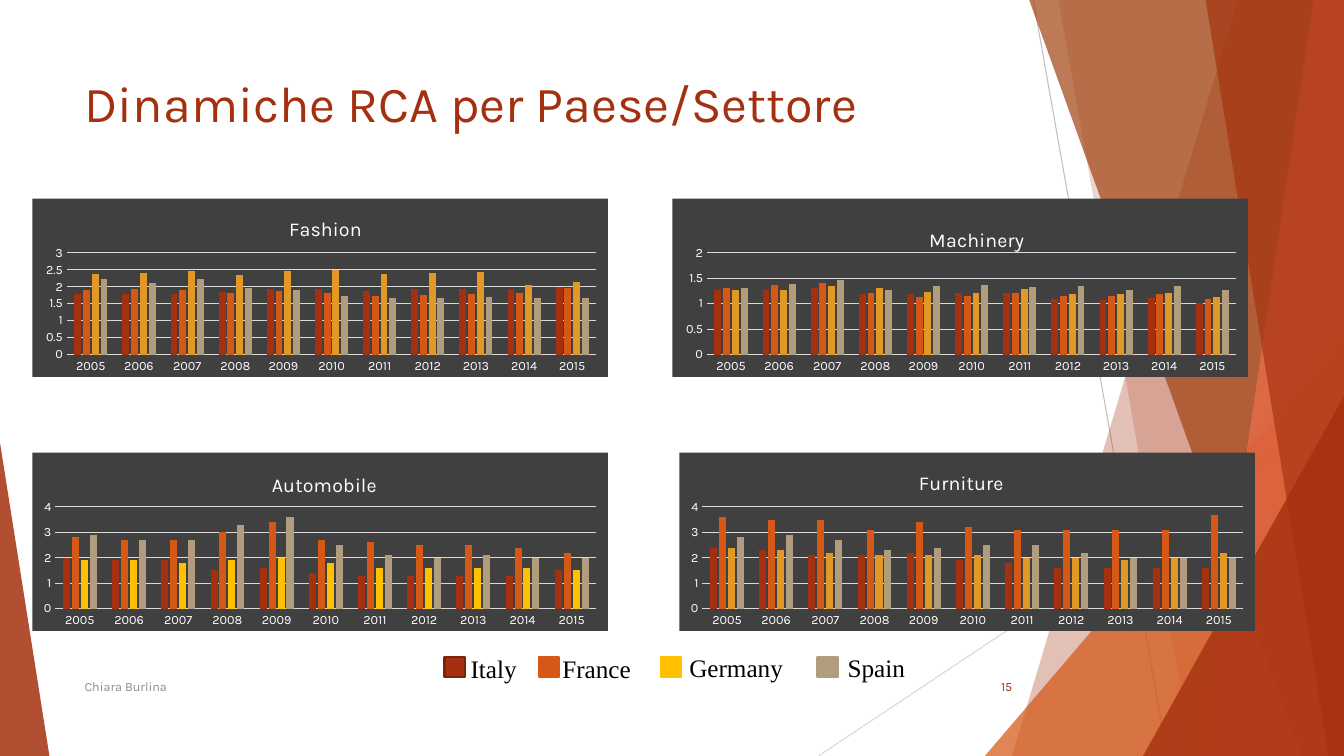
from lxml.etree import SubElement
from pptx import Presentation
from pptx.chart.data import CategoryChartData
from pptx.dml.color import RGBColor
from pptx.enum.chart import XL_CHART_TYPE, XL_TICK_MARK
from pptx.enum.shapes import MSO_CONNECTOR, MSO_SHAPE
from pptx.enum.text import MSO_ANCHOR, PP_ALIGN
from pptx.oxml import parse_xml
from pptx.oxml.ns import nsdecls, qn
from pptx.util import Inches, Pt

COLORS = {
    "rust": "A5300F", "dark_rust": "7A240B", "orange": "D55816", "amber": "E19825",
    "yellow": "FFC000", "sand": "B19C7D", "brown": "A04210", "coral": "EE6E4A",
    "panel": "404040", "grid": "D9D9D9", "rule": "BFBFBF", "muted": "8C8C8C",
    "white": "FFFFFF", "black": "000000",
}
COUNTRIES = ["Italy", "France", "Germany", "Spain"]
YEARS = [str(year) for year in range(2005, 2016)]


def rgb(name):
    return RGBColor.from_string(COLORS[name])


def write(frame, text, size=9, font="Karla", color="black",
          align=PP_ALIGN.LEFT, anchor=MSO_ANCHOR.TOP):
    frame.word_wrap = True
    frame.vertical_anchor = anchor
    paragraph = frame.paragraphs[0]
    paragraph.alignment = align
    run = paragraph.add_run()
    run.text = text
    style(run.font, size, color, font)


def style(font, size, color, name="Karla"):
    font.size, font.name, font.bold = Pt(size), name, False
    font.color.rgb = rgb(color)


def set_layout(parent, index, **shares):
    """Place a chart part by shares of the chart's size."""
    for old in parent.findall(qn("c:layout")):
        parent.remove(old)
    layout = parse_xml(f"<c:layout {nsdecls('c')}><c:manualLayout/></c:layout>")
    for tag, value in shares.items():
        SubElement(layout[0], qn(f"c:{tag}")).set("val", str(value))
    parent.insert(index, layout)


class SlideBuilder:
    """Positions are percentages of the slide's width and height."""

    def __init__(self, deck):
        self.deck = deck
        self.slide = deck.slides.add_slide(deck.slide_layouts[5])
        self.shapes = self.slide.shapes

    def x(self, share):
        return round(self.deck.slide_width * share / 100)

    def y(self, share):
        return round(self.deck.slide_height * share / 100)

    def box(self, left, top, width, height):
        return self.x(left), self.y(top), self.x(width), self.y(height)

    def paint(self, shape, color, opacity=100, line=None):
        shape.shadow.inherit = False
        shape.fill.solid()
        shape.fill.fore_color.rgb = rgb(color)
        if opacity < 100:
            tint = shape.element.spPr.find(qn("a:solidFill"))[0]
            SubElement(tint, qn("a:alpha")).set("val", str(opacity * 1000))
        if line:
            shape.line.color.rgb = rgb(line)
            shape.line.width = Pt(1.5)
        else:
            shape.line.fill.background()

    def title(self, text, *place):
        title = self.shapes.title
        title.left, title.top, title.width, title.height = self.box(*place)
        write(title.text_frame, text, size=36, color="rust")

    def text(self, text, *place, **form):
        write(self.shapes.add_textbox(*self.box(*place)).text_frame, text, **form)

    def line(self, x1, y1, x2, y2, color):
        line = self.shapes.add_connector(
            MSO_CONNECTOR.STRAIGHT, self.x(x1), self.y(y1), self.x(x2), self.y(y2))
        line.line.color.rgb = rgb(color)
        line.line.width = Pt(0.75)
        SubElement(line.element.spPr, qn("a:effectLst"))

    def band(self, top_left, bottom_left, color, opacity):
        """Fill from a slanted left edge to the right side of the slide."""
        outline = self.shapes.build_freeform(self.x(top_left), 0)
        outline.add_line_segments([(self.x(100), 0), (self.x(100), self.y(100)),
                                   (self.x(bottom_left), self.y(100))])
        self.paint(outline.convert_to_shape(), color, opacity)

    def triangle(self, left, top, width, apex, color, opacity):
        triangle = self.shapes.add_shape(
            MSO_SHAPE.ISOSCELES_TRIANGLE, *self.box(left, top, width, 100 - top))
        triangle.adjustments[0] = apex
        self.paint(triangle, color, opacity)

    def swatch(self, left, top, color, line):
        swatch = self.shapes.add_shape(MSO_SHAPE.RECTANGLE, *self.box(left, top, 1.5, 2.67))
        self.paint(swatch, color, line=line)

    def chart(self, sector, left, top, title_at, plot_x, top_value, step, germany, values):
        data = CategoryChartData()
        data.categories = YEARS
        for country, shares in zip(COUNTRIES, values):
            data.add_series(country, shares)
        chart = self.shapes.add_chart(XL_CHART_TYPE.COLUMN_CLUSTERED,
                                      *self.box(left, top, 42.83, 23.6), data).chart
        style(chart.font, 10, "white")
        chart.has_legend = False
        write_title = chart.chart_title.text_frame.paragraphs[0].add_run()
        write_title.text = sector
        style(write_title.font, 14, "white")
        set_layout(chart.chart_title.element, 1, xMode="edge", yMode="edge",
                   x=title_at[0], y=title_at[1])
        plot_area = chart.element.find(qn("c:chart")).find(qn("c:plotArea"))
        set_layout(plot_area, 0, layoutTarget="inner", xMode="edge", yMode="edge",
                   x=plot_x, y=0.305, w=round(0.98 - plot_x, 2), h=0.57)

        # Dark panel
        chart.element.find(qn("c:chart")).addnext(parse_xml(
            f"<c:spPr {nsdecls('c', 'a')}><a:solidFill><a:srgbClr val='{COLORS['panel']}'/>"
            "</a:solidFill><a:ln><a:noFill/></a:ln></c:spPr>"))

        # Axes
        years, index = chart.category_axis, chart.value_axis
        for axis in (years, index):
            axis.major_tick_mark = axis.minor_tick_mark = XL_TICK_MARK.NONE
            style(axis.tick_labels.font, 9, "white")
        index.minimum_scale, index.maximum_scale, index.major_unit = 0, top_value, step
        index.tick_labels.number_format = "General"
        index.tick_labels.number_format_is_linked = False
        index.format.line.fill.background()
        for rule in (years.format.line, index.major_gridlines.format.line):
            rule.color.rgb = rgb("grid")
            rule.width = Pt(0.75)

        # Columns
        columns = chart.plots[0]
        columns.gap_width, columns.overlap, columns.vary_by_categories = 219, -27, False
        for series, color in zip(columns.series, ["rust", "orange", germany, "sand"]):
            series.format.fill.solid()
            series.format.fill.fore_color.rgb = rgb(color)


FASHION = [
    [1.8, 1.8, 1.8, 1.86, 1.93, 1.93, 1.87, 1.93, 1.94, 1.93, 2],
    [1.91, 1.93, 1.92, 1.82, 1.87, 1.82, 1.73, 1.77, 1.79, 1.83, 1.98],
    [2.37, 2.41, 2.48, 2.34, 2.48, 2.5, 2.37, 2.42, 2.44, 2.04, 2.14],
    [2.22, 2.12, 2.24, 1.96, 1.92, 1.74, 1.68, 1.68, 1.7, 1.68, 1.67]]
MACHINERY = [
    [1.27, 1.27, 1.32, 1.19, 1.19, 1.21, 1.21, 1.1, 1.08, 1.12, 1.02],
    [1.32, 1.36, 1.41, 1.22, 1.14, 1.15, 1.21, 1.16, 1.16, 1.19, 1.1],
    [1.27, 1.28, 1.34, 1.3, 1.23, 1.21, 1.29, 1.19, 1.2, 1.21, 1.14],
    [1.31, 1.39, 1.47, 1.27, 1.34, 1.37, 1.33, 1.34, 1.28, 1.34, 1.26]]
AUTOMOBILE = [
    [2, 1.9, 1.9, 1.5, 1.6, 1.4, 1.3, 1.3, 1.3, 1.3, 1.5],
    [2.8, 2.7, 2.7, 3, 3.4, 2.7, 2.6, 2.5, 2.5, 2.4, 2.2],
    [1.9, 1.9, 1.8, 1.9, 2, 1.8, 1.6, 1.6, 1.6, 1.6, 1.5],
    [2.9, 2.7, 2.7, 3.3, 3.6, 2.5, 2.1, 2, 2.1, 2, 2]]
FURNITURE = [
    [2.4, 2.3, 2.1, 2.1, 2.2, 1.9, 1.8, 1.6, 1.6, 1.6, 1.6],
    [3.6, 3.5, 3.5, 3.1, 3.4, 3.2, 3.1, 3.1, 3.1, 3.1, 3.7],
    [2.4, 2.3, 2.2, 2.1, 2.1, 2.1, 2, 2, 1.9, 2, 2.2],
    [2.8, 2.9, 2.7, 2.3, 2.4, 2.5, 2.5, 2.2, 2, 2, 2]]


def main():
    deck = Presentation()
    deck.slide_width, deck.slide_height = Inches(13.33), Inches(7.5)
    page = SlideBuilder(deck)

    # Faceted backdrop
    page.line(76.88, 0, 86.86, 100, "rule")
    page.line(100, 53.73, 60.9, 100, "grid")
    page.band(92.1, 75.3, "rust", 30)
    page.band(78.75, 88.73, "rust", 20)
    page.triangle(73.28, 44.4, 26.72, 1, "orange", 72)
    page.band(76.58, 96.83, "brown", 70)
    page.band(97.73, 89.4, "coral", 70)
    page.band(89.7, 98.85, "rust", 65)
    page.triangle(85.05, 52.4, 14.95, 1, "rust", 80)
    page.triangle(0, 58.53, 3.68, 0, "rust", 85)

    page.title("Dinamiche RCA per Paese/Settore", 5.55, 8.93, 70.5, 19.2)

    # Sector charts
    upper, lower = 26.27, 59.87
    page.chart("Fashion", 2.4, upper, (0.44, 0.08), 0.06, 3, 0.5, "amber", FASHION)
    page.chart("Machinery", 50.03, upper, (0.44, 0.14), 0.06, 2, 0.5, "amber", MACHINERY)
    page.chart("Automobile", 2.4, lower, (0.41, 0.09), 0.04, 4, 1, "yellow", AUTOMOBILE)
    page.chart("Furniture", 50.55, lower, (0.41, 0.08), 0.04, 4, 1, "amber", FURNITURE)

    # Country legend
    legend = [(33.08, 34.28, 85.73, "rust", "dark_rust"),
              (40.13, 41.1, 85.73, "orange", "orange"),
              (49.2, 50.55, 85.6, "yellow", "yellow"),
              (60.83, 62.33, 85.6, "sand", "sand")]
    for country, (key, label, top, color, line) in zip(COUNTRIES, legend):
        page.swatch(key, 86.93, color, line)
        page.text(country, label, top, 9.08, 5.33, size=18, font="Times New Roman")

    # Footer
    page.text("Chiara Burlina", 5.55, 88.13, 51.7, 5.33,
              color="muted", anchor=MSO_ANCHOR.MIDDLE)
    page.text("15", 70.43, 88.13, 5.63, 5.33, color="rust",
              align=PP_ALIGN.RIGHT, anchor=MSO_ANCHOR.MIDDLE)
    deck.save("out.pptx")


if __name__ == "__main__":
    main()
